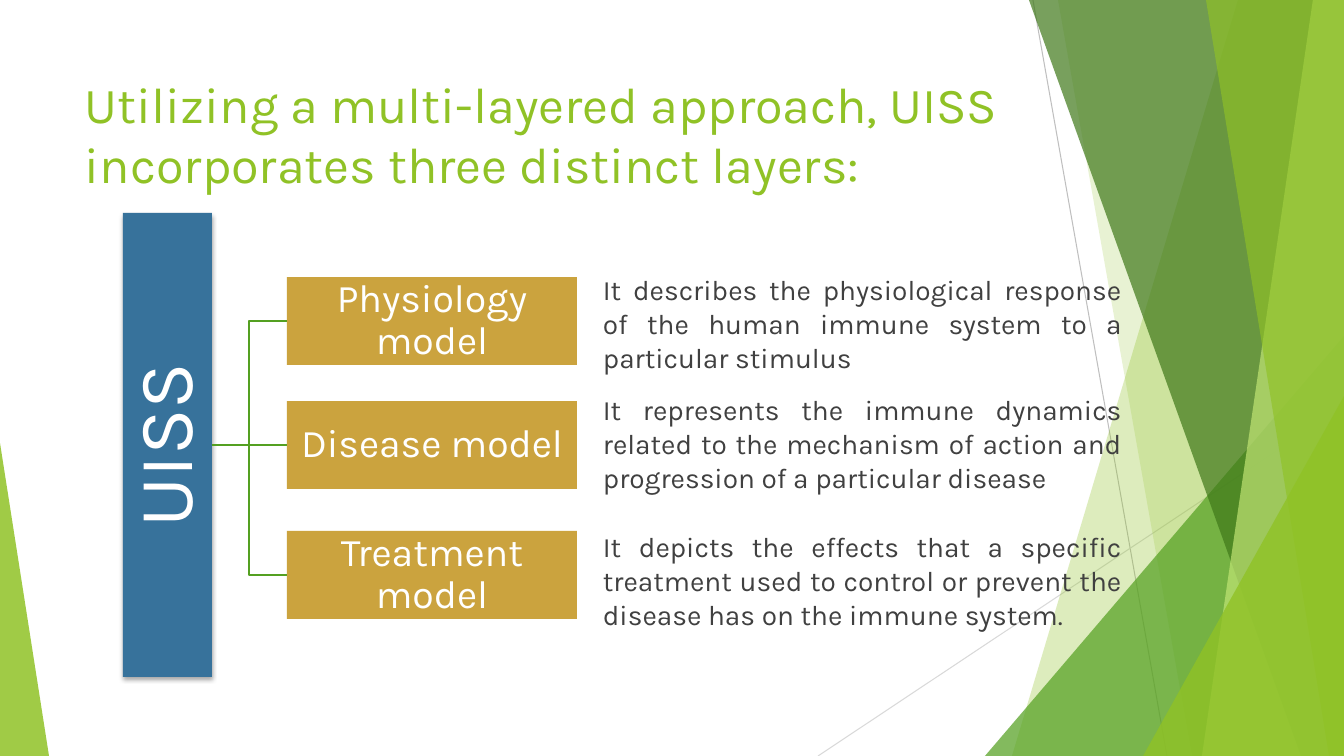
"""Build the slide on the three layers of UISS."""
from lxml import etree
from pptx import Presentation
from pptx.dml.color import RGBColor
from pptx.enum.shapes import MSO_CONNECTOR, MSO_SHAPE
from pptx.enum.text import MSO_ANCHOR, PP_ALIGN
from pptx.oxml.ns import qn
from pptx.util import Emu, Pt

STRAIGHT, ELBOW = MSO_CONNECTOR.STRAIGHT, MSO_CONNECTOR.ELBOW
RECTANGLE, TRIANGLE = MSO_SHAPE.RECTANGLE, MSO_SHAPE.ISOSCELES_TRIANGLE
TOP, MIDDLE = MSO_ANCHOR.TOP, MSO_ANCHOR.MIDDLE
LEFT, CENTER, JUSTIFY = PP_ALIGN.LEFT, PP_ALIGN.CENTER, PP_ALIGN.JUSTIFY
PX = 914400 / 100.8
WIDTH, HEIGHT = 1344, 756
LIME, GREEN, WHITE = "90C226", "54A021", "FFFFFF"


def paint(shape, color, opacity=100):
    shape.shadow.inherit = False
    shape.line.fill.background()
    shape.fill.solid()
    shape.fill.fore_color.rgb = RGBColor.from_string(color)
    if opacity < 100:
        color_element = shape.fill._xPr.find(qn("a:solidFill"))[0]
        etree.SubElement(color_element, qn("a:alpha"), val=str(opacity * 1000))


def write(shape, text, size, color, align, anchor, inset=None):
    frame = shape.text_frame
    frame.word_wrap = True
    frame.vertical_anchor = anchor
    if inset is not None:
        frame.margin_left = frame.margin_right = Emu(round(inset * PX))
        frame.margin_top = frame.margin_bottom = Emu(round(inset * PX))
    paragraph = frame.paragraphs[0]
    paragraph.alignment = align
    if anchor == MIDDLE:
        paragraph.line_spacing = 0.9
    run = paragraph.add_run()
    run.text = text
    run.font.name = "Karla"
    run.font.size = Pt(size)
    run.font.color.rgb = RGBColor.from_string(color)


presentation = Presentation()
presentation.slide_width = Emu(round(WIDTH * PX))
presentation.slide_height = Emu(round(HEIGHT * PX))
slide = presentation.slides.add_slide(presentation.slide_layouts[6])
shapes = slide.shapes

hairlines = [((1033, 0, 1167, HEIGHT), "BFBFBF"), ((WIDTH, 406, 818, HEIGHT), "D9D9D9")]
for ends, color in hairlines:
    hairline = shapes.add_connector(STRAIGHT, *(Emu(round(end * PX)) for end in ends))
    hairline.line.color.rgb = RGBColor.from_string(color)
    hairline.line.width = Pt(0.75)
    etree.SubElement(hairline._element.spPr, qn("a:effectLst"))

facets = [
    ("band", 1238, 1012, LIME, 30),
    ("band", 1058, 1192, LIME, 20),
    ("triangle", 985, 336, 359, 1, GREEN, 72),
    ("band", 1029, 1301, "3F7819", 70),
    ("band", 1313, 1202, "C0E474", 70),
    ("band", 1206, 1329, LIME, 65),
    ("triangle", 1143, 396, 201, 1, LIME, 80),
    ("triangle", 0, 443, 49, 0, LIME, 85),
]
for kind, *geometry, color, opacity in facets:
    if kind == "band":
        top_left, bottom_left = geometry
        outline = shapes.build_freeform(top_left, 0, scale=PX)
        outline.add_line_segments([(WIDTH, 0), (WIDTH, HEIGHT), (bottom_left, HEIGHT)])
        facet = outline.convert_to_shape()
    else:
        left, top, width, apex = geometry
        box = (left, top, width, HEIGHT - top)
        facet = shapes.add_shape(TRIANGLE, *(Emu(round(side * PX)) for side in box))
        facet.adjustments[0] = apex
    paint(facet, color, opacity)

title = shapes.add_textbox(*(Emu(round(side * PX)) for side in (75, 68, 948, 145)))
write(title, "Utilizing a multi-layered approach, UISS incorporates three distinct layers:",
      36, LIME, LEFT, TOP)

bar = shapes.add_shape(RECTANGLE, *(Emu(round(side * PX)) for side in (123, 213, 89, 464)))
paint(bar, "37729B")
write(bar, "UISS", 55, WHITE, CENTER, MIDDLE, 4)
bar.text_frame._txBody.bodyPr.set("vert", "vert270")
shadow = etree.SubElement(bar._element.spPr.find(qn("a:effectLst")), qn("a:outerShdw"),
                          blurRad="38100", dist="25400", dir="5400000", rotWithShape="0")
shadow_color = etree.SubElement(shadow, qn("a:srgbClr"), val="000000")
etree.SubElement(shadow_color, qn("a:alpha"), val="35000")

layers = [
    ("Physiology model", 277, 268, ELBOW,
     "It describes the physiological response of the human immune system "
     "to a particular stimulus"),
    ("Disease model", 401, 388, STRAIGHT,
     "It represents the immune dynamics related to the mechanism of action "
     "and progression of a particular disease"),
    ("Treatment model", 531, 525, ELBOW,
     "It depicts the effects that a specific treatment used to control or "
     "prevent the disease has on the immune system."),
]
for name, box_top, text_top, route, description in layers:
    layer = shapes.add_shape(RECTANGLE, *(Emu(round(side * PX)) for side in (287, box_top, 290, 88)))
    paint(layer, "CBA33E")
    write(layer, name, 28, WHITE, CENTER, MIDDLE, 2)

    branch = shapes.add_connector(route, 0, 0, 0, 0)
    branch.begin_connect(bar, 3)
    branch.end_connect(layer, 1)
    branch.line.color.rgb = RGBColor.from_string(GREEN)
    branch.line.width = Pt(1.5)
    etree.SubElement(branch._element.spPr, qn("a:effectLst"))

    note = shapes.add_textbox(*(Emu(round(side * PX)) for side in (593, text_top, 539, 112)))
    write(note, description, 20, "404040", JUSTIFY, TOP)

presentation.save("out.pptx")
